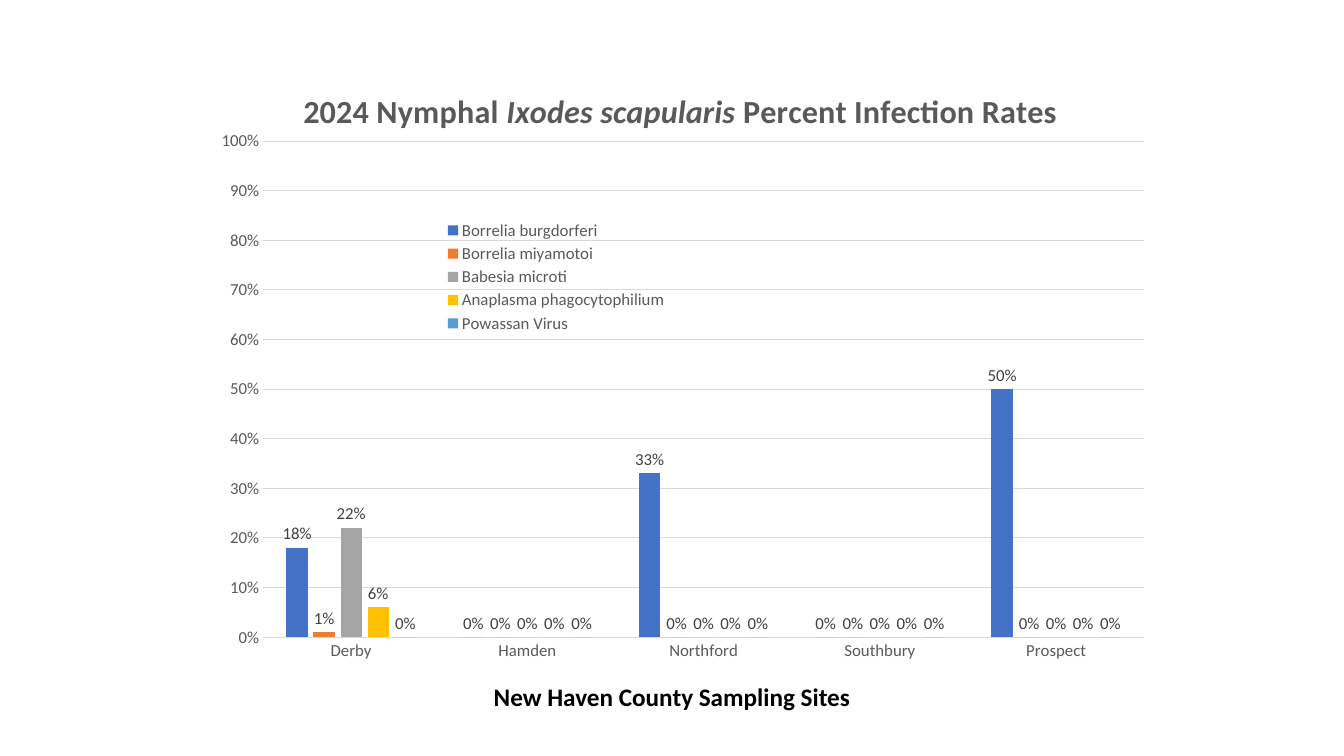
"""Build a slide charting 2024 nymphal tick infection rates by sampling site."""
from dataclasses import dataclass

from lxml.etree import SubElement
from pptx import Presentation
from pptx.chart.data import CategoryChartData
from pptx.dml.color import RGBColor as Rgb
from pptx.enum.chart import XL_CHART_TYPE as ChartType
from pptx.enum.chart import XL_LABEL_POSITION as LabelPos
from pptx.enum.chart import XL_LEGEND_POSITION as LegendPos
from pptx.enum.chart import XL_TICK_MARK as Tick
from pptx.enum.text import MSO_AUTO_SIZE as AutoSize
from pptx.enum.text import PP_ALIGN as Align
from pptx.oxml.ns import qn
from pptx.util import Inches, Pt


@dataclass(frozen=True)
class Theme:
    font: str = "Calibri"
    black: str = "000000"
    muted: str = "595959"
    label: str = "404040"
    grid: str = "D9D9D9"
    title_size: int = 23
    caption_size: int = 18
    body_size: int = 12


def style(font, size, color, bold=False):
    font.name = theme.font
    font.size = Pt(size)
    font.bold = bold
    font.color.rgb = Rgb.from_string(color)


def place(part, index, **shares):
    for old in part.findall(qn("c:layout")):
        part.remove(old)
    layout = part.makeelement(qn("c:layout"))
    manual = SubElement(layout, qn("c:manualLayout"))
    if "w" in shares and part.tag == qn("c:plotArea"):
        SubElement(manual, qn("c:layoutTarget")).set("val", "inner")
    for side in ("x", "y"):
        SubElement(manual, qn(f"c:{side}Mode")).set("val", "edge")
    for side, share in shares.items():
        SubElement(manual, qn(f"c:{side}")).set("val", str(share))
    part.insert(index, layout)


theme = Theme()
sites = ["Derby", "Hamden", "Northford", "Southbury", "Prospect"]
pathogens = [
    ("Borrelia burgdorferi", "4472C4", [0.18, 0, 0.33, 0, 0.5]),
    ("Borrelia miyamotoi", "ED7D31", [0.01, 0, 0, 0, 0]),
    ("Babesia microti", "A5A5A5", [0.22, 0, 0, 0, 0]),
    ("Anaplasma phagocytophilium", "FFC000", [0.06, 0, 0, 0, 0]),
    ("Powassan Virus", "5B9BD5", [0, 0, 0, 0, 0]),
]

deck = Presentation()
deck.slide_width, deck.slide_height = Inches(13.33), Inches(7.5)
slide = deck.slides.add_slide(deck.slide_layouts[6])

rates = CategoryChartData(number_format="0%")
rates.categories = sites
for pathogen, _, values in pathogens:
    rates.add_series(pathogen, values)
chart = slide.shapes.add_chart(
    ChartType.COLUMN_CLUSTERED,
    Inches(2.06), Inches(0.79), Inches(9.47), Inches(5.93), rates,
).chart
style(chart.font, theme.body_size, theme.muted)

chart.has_title = True
heading = chart.chart_title.text_frame.paragraphs[0]
for words, italic in [
    ("2024 Nymphal ", False),
    ("Ixodes scapularis", True),
    (" Percent Infection Rates", False),
]:
    run = heading.add_run()
    run.text = words
    style(run.font, theme.title_size, theme.muted, bold=True)
    run.font.italic = italic
place(chart.chart_title._element, 1, x=0.097, y=0.013)

chart.has_legend = True
legend = chart.legend
legend.position = LegendPos.RIGHT
legend.include_in_layout = False
style(legend.font, theme.body_size, theme.muted)
place(legend._element, 1, x=0.24, y=0.23, w=0.25, h=0.2)
place(chart._chartSpace.chart.plotArea, 0, x=0.058, y=0.103, w=0.923, h=0.83)

for axis in (chart.category_axis, chart.value_axis):
    axis.major_tick_mark = axis.minor_tick_mark = Tick.NONE
    style(axis.tick_labels.font, theme.body_size, theme.muted)
rate_axis = chart.value_axis
rate_axis.minimum_scale, rate_axis.maximum_scale = 0, 1
rate_axis.major_unit = 0.1
rate_axis.tick_labels.number_format = "0%"
rate_axis.tick_labels.number_format_is_linked = False
rate_axis.format.line.fill.background()
for rule in (chart.category_axis.format.line, rate_axis.major_gridlines.format.line):
    rule.color.rgb = Rgb.from_string(theme.grid)
    rule.width = Pt(0.75)

columns = chart.plots[0]
columns.gap_width, columns.overlap = 219, -27
columns.vary_by_categories = False
for series, (_, color, _) in zip(columns.series, pathogens):
    series.format.fill.solid()
    series.format.fill.fore_color.rgb = Rgb.from_string(color)
    labels = series.data_labels
    labels.show_value = True
    labels.position = LabelPos.OUTSIDE_END
    labels.number_format = "0%"
    labels.number_format_is_linked = False
    style(labels.font, theme.body_size, theme.label)

caption = slide.shapes.add_textbox(
    Inches(4.78), Inches(6.71), Inches(3.77), Inches(0.4)
).text_frame
caption.word_wrap = False
caption.auto_size = AutoSize.SHAPE_TO_FIT_TEXT
caption.text = "New Haven County Sampling Sites"
caption.paragraphs[0].alignment = Align.CENTER
style(caption.paragraphs[0].runs[0].font, theme.caption_size, theme.black, bold=True)

deck.save("out.pptx")
